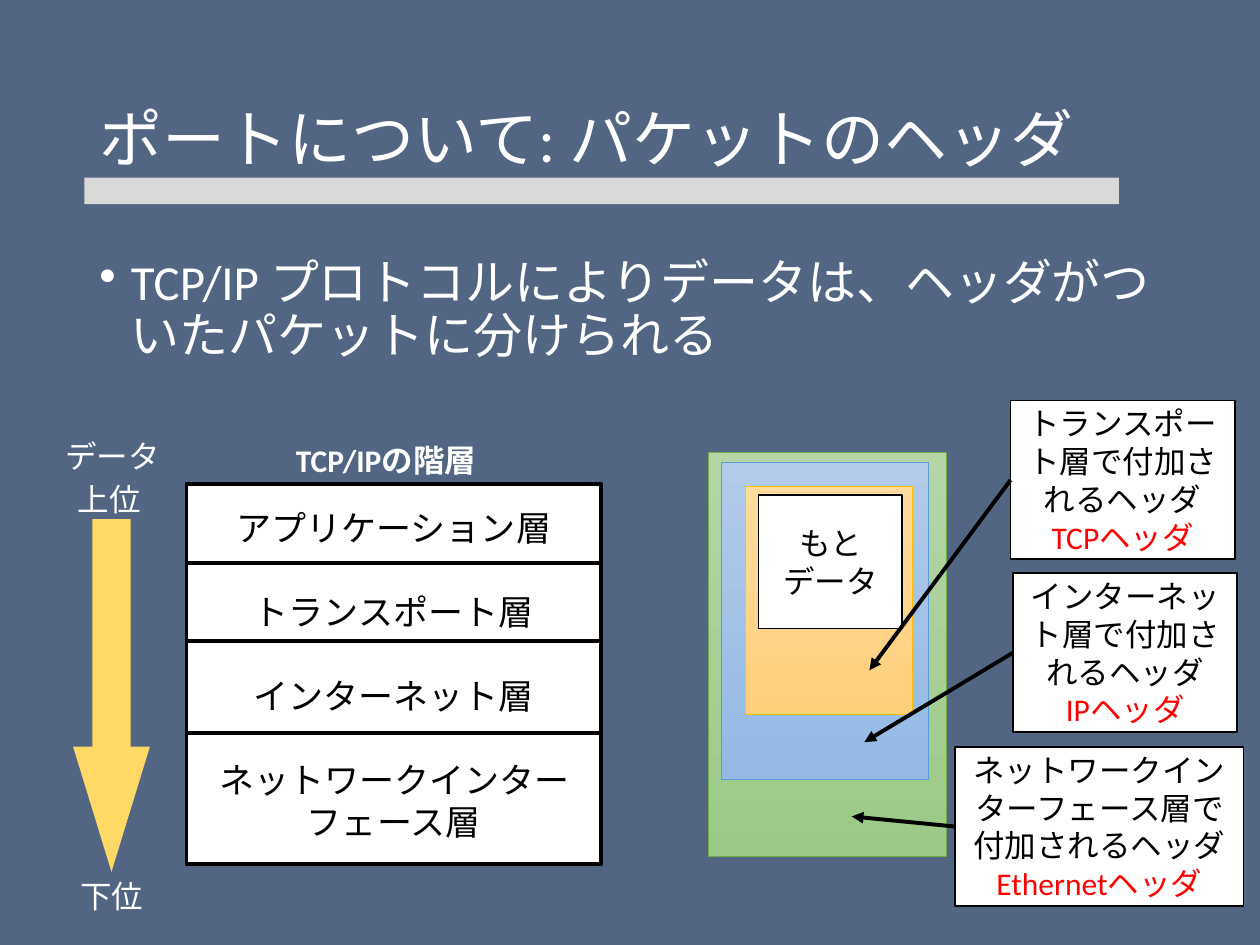
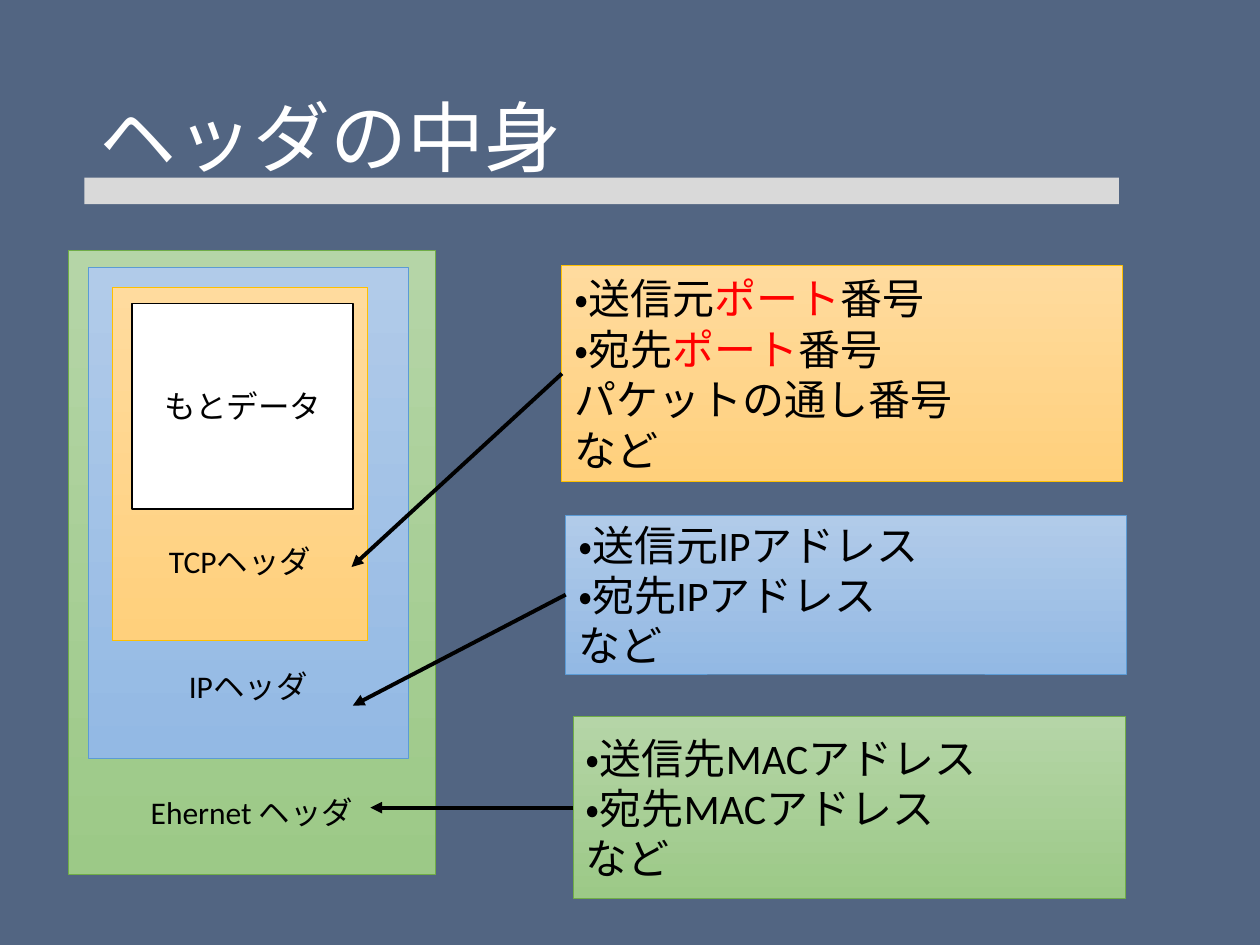
"""Build two slides on the headers that each TCP/IP layer adds to a packet."""
from lxml import etree
from pptx import Presentation
from pptx.dml.color import RGBColor
from pptx.enum.lang import MSO_LANGUAGE_ID
from pptx.enum.shapes import MSO_CONNECTOR, MSO_SHAPE
from pptx.enum.text import MSO_ANCHOR, PP_ALIGN
from pptx.oxml.ns import qn
from pptx.util import Inches, Pt

STRAIGHT = MSO_CONNECTOR.STRAIGHT
RECTANGLE, DOWN_ARROW = MSO_SHAPE.RECTANGLE, MSO_SHAPE.DOWN_ARROW
TOP, MIDDLE, BOTTOM = MSO_ANCHOR.TOP, MSO_ANCHOR.MIDDLE, MSO_ANCHOR.BOTTOM
LEFT, CENTER = PP_ALIGN.LEFT, PP_ALIGN.CENTER
JAPANESE = MSO_LANGUAGE_ID.JAPANESE
LEFT_SIDE = 1

FONT = "Calibri"
BACKGROUND, BAND, ARROW = "526582", "D9D9D9", "FFD966"
WHITE, BLACK, RED = "FFFFFF", "000000", "FF0000"
ETHERNET = (("B5D5A7", "9CC987"), "70AD47")
IP = (("B1CBE9", "93B9E4"), "5B9BD5")
TCP = (("FFDB9E", "FFD07C"), "FFC000")

TITLE_AREA = (0.69, 0.4, 8.62, 1.45)
BAND_AREA = (0.67, 1.41, 8.21, 0.21)

PACKET_TITLE = ("ポートについて: パケットのヘッダ", 36)
PACKET_POINT = "TCP/IP プロトコルによりデータは、ヘッダがついたパケットに分けられる"
LAYER_NAMES = ["アプリケーション層", "トランスポート層", "インターネット層",
               "ネットワークインターフェース層"]
LAYER_AREA = (1.48, 3.84, 3.29, 3.02)
LAYER_DIVIDERS = [4.47, 5.09, 5.82]
LABELS = [("データ", 0.42, 3.42, 1.09, False), ("上位", 0.52, 3.76, 1.04, False),
          ("下位", 0.54, 6.91, 1.04, False), ("TCP/IPの階層", 2.25, 3.45, 1.83, True)]
PACKET_NEST = [(ETHERNET, (5.62, 3.59, 1.89, 3.21)), (IP, (5.73, 3.67, 1.64, 2.52)),
               (TCP, (5.92, 3.86, 1.32, 1.81))]
PACKET_DATA_AREA = (6.02, 3.93, 1.14, 1.06)
# Text after a bar is red, up to the next bar.
CALLOUTS = [
    (["トランスポート層で付加されるヘッダ", "|TCPヘッダ"], (8.02, 3.18, 1.78, 1.26), (6.9, 5.32)),
    (["インターネット層で付加されるヘッダ", "|IPヘッダ"], (8.04, 4.55, 1.78, 1.26), (6.86, 5.89)),
    (["ネットワークインターフェース層で付加されるヘッダ", "|Ethernetヘッダ"],
     (7.58, 5.93, 2.29, 1.26), (6.76, 6.48)),
]

HEADER_TITLE = ("ヘッダの中身", 44)
HEADER_NEST = [("Ehernet ヘッダ", ETHERNET, (0.54, 1.99, 2.92, 4.95), 0.35),
               ("IPヘッダ", IP, (0.7, 2.12, 2.54, 3.9), 0.43),
               ("TCPヘッダ", TCP, (0.89, 2.28, 2.03, 2.8), 0.48)]
HEADER_DATA_AREA = (1.05, 2.41, 1.75, 1.63)
HEADER_FIELDS = [
    (["・送信元IPアドレス", "・宛先IPアドレス", "など"], IP, (4.49, 4.09, 4.45, 1.26), (2.8, 5.6)),
    (["・送信先MACアドレス", "・宛先MACアドレス", "など"], ETHERNET,
     (4.55, 5.69, 4.38, 1.44), (2.94, 6.41)),
    (["・送信元|ポート|番号", "・宛先|ポート|番号", "パケットの通し番号", "など"], TCP,
     (4.46, 2.11, 4.45, 1.71), (2.79, 4.5)),
]


def color(value):
    """Turn a hex string into a colour."""
    return RGBColor.from_string(value)


def write(box, lines, size, ink=BLACK, align=LEFT, anchor=MIDDLE, gap=0):
    """Write one paragraph per line, with the marked spans in red."""
    frame = box.text_frame
    frame.word_wrap = True
    frame.vertical_anchor = anchor
    for number, line in enumerate(lines):
        para = frame.add_paragraph() if number else frame.paragraphs[0]
        para.alignment = align
        para.font.name, para.font.size = FONT, Pt(size)
        if number and gap:
            para.space_before = Pt(gap)
        for position, text in enumerate(line.split("|")):
            if text:
                span = para.add_run()
                span.text = text
                span.font.language_id = JAPANESE
                span.font.color.rgb = color(RED if position % 2 else ink)
    return frame


def add_text(page, area, text, size, anchor=TOP):
    """Add a white one-paragraph text box and return its paragraph."""
    box = page.shapes.add_textbox(*map(Inches, area))
    return write(box, [text], size, WHITE, anchor=anchor).paragraphs[0]


def add_block(page, area, fill, line=None, width=1, kind=RECTANGLE):
    """Add a shape with a plain fill or a (top, bottom) gradient."""
    block = page.shapes.add_shape(kind, *map(Inches, area))
    block.shadow.inherit = False
    if isinstance(fill, tuple):
        block.fill.gradient()
        block.fill.gradient_angle = 270
        for stop, shade in zip(block.fill.gradient_stops, fill):
            stop.color.rgb = color(shade)
            stop.position = fill.index(shade)
    else:
        block.fill.solid()
        block.fill.fore_color.rgb = color(fill)
    if line:
        block.line.color.rgb = color(line)
        block.line.width = Pt(width)
    else:
        block.line.fill.background()
    return block


def add_line(page, start, end):
    """Add a black line."""
    line = page.shapes.add_connector(STRAIGHT, *map(Inches, start + end))
    line.line.color.rgb = color(BLACK)
    line.line.width = Pt(2.25)
    etree.SubElement(line._element.spPr, qn("a:effectLst"))
    return line


def add_pointer(page, box, target):
    """Add an arrow from the left side of a box to a target point."""
    pointer = add_line(page, target, target)
    pointer.begin_connect(box, LEFT_SIDE)
    outline = pointer.line._get_or_add_ln()
    etree.SubElement(outline, qn("a:tailEnd"), type="triangle")


def add_data(page, area):
    """Add the white box of the payload."""
    write(add_block(page, area, WHITE, BLACK), ["もとデータ"], 18, align=CENTER)


def add_page(deck, title, size):
    """Add a blank page with its title and band."""
    page = deck.slides.add_slide(deck.slide_layouts[6])
    add_text(page, TITLE_AREA, title, size, MIDDLE).line_spacing = 0.9
    add_block(page, BAND_AREA, BAND)
    return page


def add_layers(page):
    """Draw the stack of TCP/IP layers with its labels."""
    arrow = add_block(page, (0.58, 4.12, 0.61, 2.8), ARROW, kind=DOWN_ARROW)
    arrow.adjustments[0], arrow.adjustments[1] = 0.5, 1.63
    stack = add_block(page, LAYER_AREA, WHITE, BLACK, 2.25)
    write(stack, LAYER_NAMES, 20, align=CENTER, gap=24)
    left, right = LAYER_AREA[0], LAYER_AREA[0] + LAYER_AREA[2]
    for height in LAYER_DIVIDERS:
        add_line(page, (left, height), (right, height))
    for text, x, y, width, bold in LABELS:
        add_text(page, (x, y, width, 0.4), text, 18).font.bold = bold


def build_packet_page(deck):
    """Build the page on how layers wrap data in headers."""
    page = add_page(deck, *PACKET_TITLE)
    point = add_text(page, (0.69, 2, 8.62, 1.2), PACKET_POINT, 28)
    point.line_spacing, point.space_before = 0.9, Pt(10)
    layout = point._p.get_or_add_pPr()
    layout.set("marL", str(Inches(0.25)))
    layout.set("indent", str(Inches(-0.25)))
    bullet = layout.makeelement(qn("a:buChar"), {"char": "•"})
    layout.find(qn("a:defRPr")).addprevious(bullet)
    add_layers(page)
    for (fill, line), area in PACKET_NEST:
        add_block(page, area, fill, line, 0.5)
    add_data(page, PACKET_DATA_AREA)
    for lines, area, target in CALLOUTS:
        box = add_block(page, area, WHITE, BLACK)
        write(box, lines, 18, align=CENTER)
        add_pointer(page, box, target)


def build_header_page(deck):
    """Build the page on what each header holds."""
    page = add_page(deck, *HEADER_TITLE)
    for name, (fill, line), area, inset in HEADER_NEST:
        box = add_block(page, area, fill, line, 0.5)
        frame = write(box, [name], 18, align=CENTER, anchor=BOTTOM)
        frame.margin_bottom = Inches(inset)
    add_data(page, HEADER_DATA_AREA)
    for lines, (fill, line), area, target in HEADER_FIELDS:
        box = add_block(page, area, fill, line, 0.5)
        write(box, lines, 24)
        add_pointer(page, box, target)


def main():
    """Build and save the deck."""
    deck = Presentation()
    deck.slide_width, deck.slide_height = Inches(10), Inches(7.5)
    backdrop = deck.slide_master.background.fill
    backdrop.solid()
    backdrop.fore_color.rgb = color(BACKGROUND)
    build_packet_page(deck)
    build_header_page(deck)
    deck.save("out.pptx")


if __name__ == "__main__":
    main()
